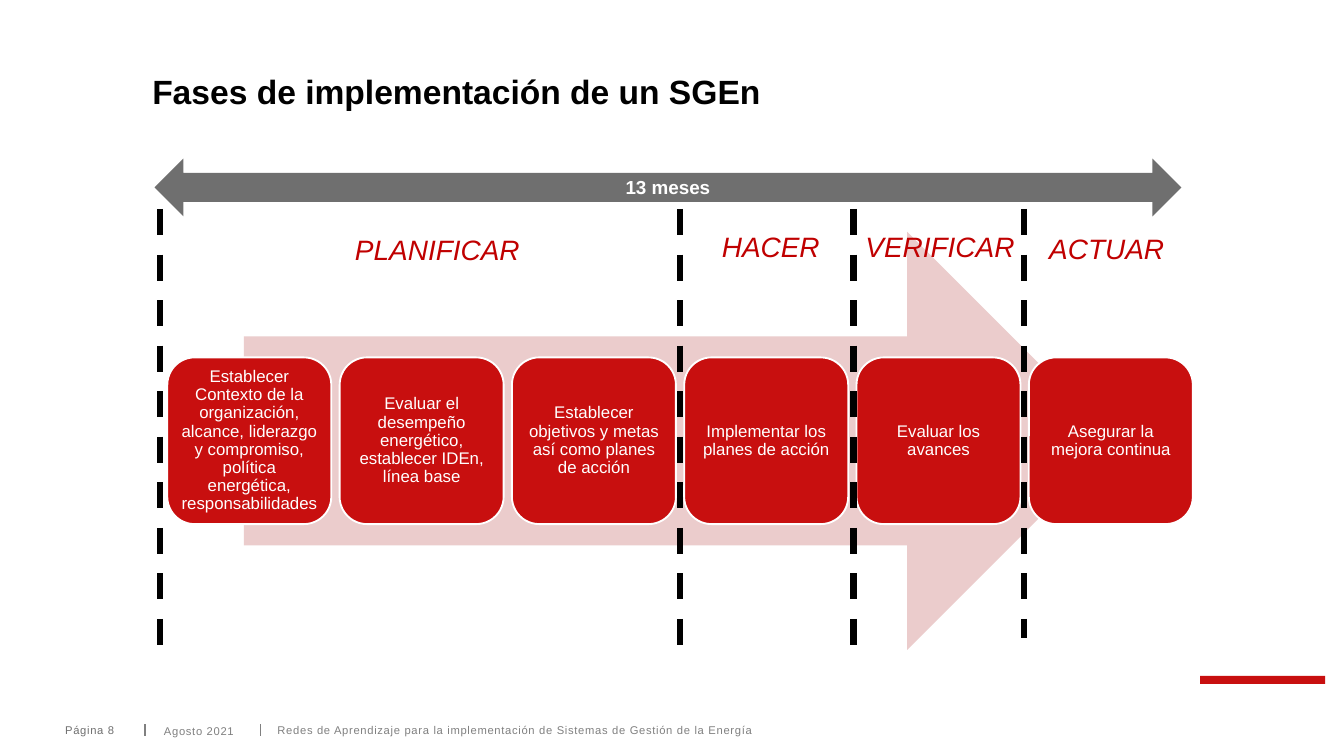
from dataclasses import dataclass

from lxml.etree import SubElement
from pptx import Presentation
from pptx.dml.color import RGBColor
from pptx.enum.dml import MSO_LINE
from pptx.enum.shapes import MSO_CONNECTOR as Connector, MSO_SHAPE as Shape
from pptx.enum.text import MSO_ANCHOR as Anchor, PP_ALIGN as Align
from pptx.oxml.ns import qn
from pptx.util import Inches, Pt

# Content
TITLE = "Fases de implementación de un SGEn"
DURATION = "13 meses"
STEPS = [
    "Establecer Contexto de la organización, alcance, liderazgo y compromiso, "
    "política energética, responsabilidades",
    "Evaluar el desempeño energético, establecer IDEn, línea base",
    "Establecer objetivos y metas así como planes de acción",
    "Implementar los planes de acción",
    "Evaluar los avances",
    "Asegurar la mejora continua",
]
# Phase, label box (left, top, width), divider (x, bottom)
PHASES = [
    ("PLANIFICAR", (15.4, 16.8, 34.3), (11.9, 48.3)),
    ("HACER", (51.6, 16.6, 11.5), (50.6, 48.3)),
    ("VERIFICAR", (63.1, 16.6, 13.7), (63.5, 48.3)),
    ("ACTUAR", (76.6, 16.75, 11.5), (76.2, 47.5)),
]


@dataclass(frozen=True)
class Theme:
    font: str = "Arial"
    red: str = "C80F0F"
    label_red: str = "C00000"
    pink: str = "EBCCCC"
    dark_grey: str = "6F6F6F"
    grey: str = "808080"
    black: str = "000000"
    white: str = "FFFFFF"
    title_size: float = 18
    phase_size: float = 15
    duration_size: float = 10.1
    step_size: float = 9
    footer_size: float = 6


THEME = Theme()

# Footer text, box (left, top, width), colour
FOOTER = [
    ("Página 8", (4.85, 53.85, 6.1), THEME.dark_grey),
    ("Agosto 2021", (12.2, 53.9, 5.9), THEME.grey),
    ("Redes de Aprendizaje para la implementación de Sistemas de Gestión de la Energía",
     (20.65, 53.85, 62.4), THEME.grey),
]

# Grid of square cells, 100 columns by 56.25 rows
COLUMNS, ROWS = 100, 56.25
CELL = Inches(0.1)
STEP_LEFT, STEP_TOP, STEP_WIDTH, STEP_HEIGHT = 12.45, 26.6, 12.2, 12.4
STEP_PITCH = 12.82
DIVIDER_TOP = 15.55

deck = Presentation()
deck.slide_width, deck.slide_height = int(COLUMNS * CELL), int(ROWS * CELL)
slide = deck.slides.add_slide(deck.slide_layouts[6])


def cells(*counts):
    return [int(count * CELL) for count in counts]


def rgb(colour):
    return RGBColor.from_string(colour)


def write(shape, text, size, colour, align=Align.LEFT, anchor=Anchor.MIDDLE,
          insets=(1, 0.5), bold=False, italic=False, spacing=None, tracking=None):
    frame = shape.text_frame
    frame.text = text
    frame.word_wrap = True
    frame.vertical_anchor = anchor
    frame.margin_left = frame.margin_right = cells(insets[0])[0]
    frame.margin_top = frame.margin_bottom = cells(insets[1])[0]
    paragraph = frame.paragraphs[0]
    paragraph.alignment = align
    paragraph.line_spacing = spacing
    font = paragraph.runs[0].font
    font.name, font.size = THEME.font, Pt(size)
    font.bold, font.italic = bold, italic
    font.color.rgb = rgb(colour)
    if tracking:
        font._element.set("spc", str(tracking))


def add_text(box, *args, **style):
    write(slide.shapes.add_textbox(*cells(*box)), *args, **style)


def add_block(kind, box, fill, outline=None):
    block = slide.shapes.add_shape(kind, *cells(*box))
    block.shadow.inherit = False
    block.fill.solid()
    block.fill.fore_color.rgb = rgb(fill)
    if outline:
        block.line.color.rgb = rgb(outline)
        block.line.width = Pt(1)
    else:
        block.line.fill.background()
    return block


def add_vertical(x, top, bottom, colour, width, dash=None):
    rule = slide.shapes.add_connector(Connector.STRAIGHT, *cells(x, top, x, bottom))
    rule.line.color.rgb = rgb(colour)
    rule.line.width = Pt(width)
    if dash:
        rule.line.dash_style = dash
    SubElement(rule._element.spPr, qn("a:effectLst"))


# Accent bar and footer separators
add_block(Shape.RECTANGLE, (89.3, 50.3, 9.3, 0.6), THEME.red)
for x in (10.8, 19.4):
    add_vertical(x, 53.9, 54.8, THEME.grey, 0.75)

# Title
add_text((10.35, 4.4, 71.6, 5.1), TITLE, THEME.title_size, THEME.black,
         bold=True, spacing=0.9)

# Process arrow with its steps
add_block(Shape.RIGHT_ARROW, (18.15, 17.25, 64.9, 31.1), THEME.pink)
for index, step in enumerate(STEPS):
    left = STEP_LEFT + index * STEP_PITCH
    card = add_block(Shape.ROUNDED_RECTANGLE, (left, STEP_TOP, STEP_WIDTH, STEP_HEIGHT),
                     THEME.red, THEME.white)
    write(card, step, THEME.step_size, THEME.white, Align.CENTER,
          insets=(0.4, 0.4), spacing=0.9)

# Dividers between phases
for _, _, (x, bottom) in PHASES:
    add_vertical(x, DIVIDER_TOP, bottom, THEME.black, 3.5, MSO_LINE.DASH)

# Duration arrow
duration = add_block(Shape.LEFT_RIGHT_ARROW, (11.5, 11.8, 76.4, 4.3), THEME.dark_grey)
write(duration, DURATION, THEME.duration_size, THEME.white, Align.CENTER,
      insets=(0.7, 0.4), bold=True)

# Phase labels
for phase, box, _ in PHASES:
    add_text((*box, 3.5), phase, THEME.phase_size, THEME.label_red, Align.CENTER,
             Anchor.TOP, italic=True)

# Footer
for text, box, colour in FOOTER:
    add_text((*box, 1), text, THEME.footer_size, colour, insets=(0, 0), tracking=36)

deck.save("out.pptx")
